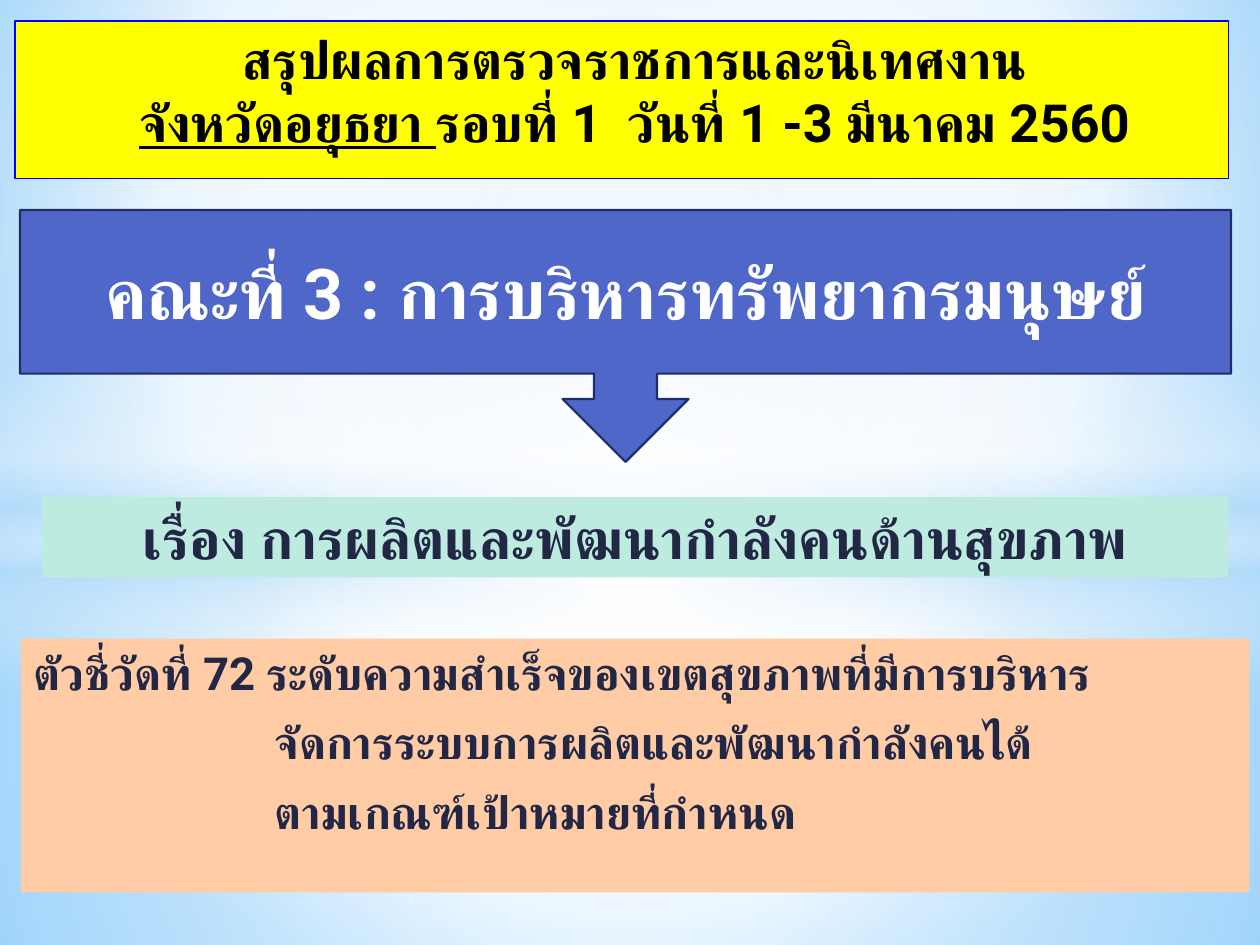
from lxml.etree import SubElement
from pptx import Presentation
from pptx.dml.color import RGBColor
from pptx.enum.shapes import MSO_SHAPE
from pptx.enum.text import MSO_ANCHOR, PP_ALIGN
from pptx.oxml.ns import qn
from pptx.util import Pt

FONT = "Roboto"
BLACK = RGBColor(0x00, 0x00, 0x00)
WHITE = RGBColor(0xFF, 0xFF, 0xFF)
NAVY = RGBColor(0x21, 0x27, 0x45)
YELLOW = RGBColor(0xFF, 0xFF, 0x00)
BLUE = RGBColor(0x00, 0x00, 0xFF)
INDIGO = RGBColor(0x4E, 0x67, 0xC8)
DARK_INDIGO = RGBColor(0x1F, 0x2E, 0x69)
MINT = RGBColor(0xBE, 0xEB, 0xDF)
PEACH = RGBColor(0xFF, 0xCC, 0xA6)
SKY = RGBColor(0xB4, 0xDC, 0xFA)
SKY_LIGHT = RGBColor(0x9E, 0xD5, 0xFF)
SKY_DEEP = RGBColor(0x5B, 0xB9, 0xFF)
CENTRE = (50, 50, 50, 50)


def set_gradient(fill, properties, stops, focus=None, angle=90):
    """Stops are (position, colour, opacity) in percent; a focus makes it circular."""
    fill.gradient()
    gradient = properties.find(".//" + qn("a:gradFill"))
    for child in list(gradient):
        gradient.remove(child)
    stop_list = SubElement(gradient, qn("a:gsLst"))
    for position, colour, opacity in stops:
        stop = SubElement(stop_list, qn("a:gs"), pos=str(position * 1000))
        tint = SubElement(stop, qn("a:srgbClr"), val=str(colour))
        if opacity < 100:
            SubElement(tint, qn("a:alpha"), val=str(opacity * 1000))
    if focus:
        circle = SubElement(gradient, qn("a:path"), path="circle")
        sides = {side: str(value * 1000) for side, value in zip("ltrb", focus)}
        SubElement(circle, qn("a:fillToRect"), **sides)
    else:
        SubElement(gradient, qn("a:lin"), ang=str(angle * 60000), scaled="0")


def add_box(slide, box, fill=None, line=None, line_width=1, kind=MSO_SHAPE.RECTANGLE):
    shape = slide.shapes.add_shape(kind, *(Pt(length) for length in box))
    shape.shadow.inherit = False
    if fill is not None:
        shape.fill.solid()
        shape.fill.fore_color.rgb = fill
    if line is None:
        shape.line.fill.background()
    else:
        shape.line.color.rgb = line
        shape.line.width = Pt(line_width)
    shape.text_frame.word_wrap = True
    shape.text_frame.vertical_anchor = MSO_ANCHOR.TOP
    return shape


def add_text(paragraph, text, size, colour, underline=None, align=PP_ALIGN.CENTER,
             indent=0, before=0, after=0):
    paragraph.alignment = align
    paragraph.space_before, paragraph.space_after = Pt(before), Pt(after)
    if indent:
        paragraph._p.get_or_add_pPr().set("marL", str(Pt(indent)))
    run = paragraph.add_run()
    run.text = text
    font = run.font
    font.name, font.size, font.bold, font.underline = FONT, Pt(size), True, underline
    font.color.rgb = colour
    # Thai takes the complex-script font
    SubElement(run._r.get_or_add_rPr(), qn("a:cs"), typeface=FONT)


def draw_backdrop(slide, box):
    left, top, width, height = box
    background = slide.background
    set_gradient(background.fill, slide._element,
                 [(0, SKY_LIGHT, 100), (60, WHITE, 100), (100, SKY_DEEP, 100)],
                 focus=(20, 10, 20, 60))
    horizon = 304.5
    layers = [
        # Lower and upper glow
        (MSO_SHAPE.RECTANGLE, horizon, height - horizon,
         [(0, WHITE, 91), (37, WHITE, 76), (100, SKY, 79)], CENTRE),
        (MSO_SHAPE.RECTANGLE, 0, horizon,
         [(0, WHITE, 89), (48, WHITE, 62), (100, SKY, 79)], CENTRE),
        # Horizon band
        (MSO_SHAPE.RECTANGLE, 209, 180,
         [(0, WHITE, 0), (29, WHITE, 30), (45, SKY, 40), (55, WHITE, 26),
          (65, SKY, 60), (100, WHITE, 0)], None),
        # Central light
        (MSO_SHAPE.OVAL, 126, 402, [(0, WHITE, 100), (54, WHITE, 0)], CENTRE),
    ]
    for kind, offset, layer_height, stops, focus in layers:
        shape = add_box(slide, (left, top + offset, width, layer_height), kind=kind)
        set_gradient(shape.fill, shape._element.spPr, stops, focus)


def draw_title(slide, box):
    frame = add_box(slide, box, YELLOW, BLUE, 0.75).text_frame
    style = {"size": 30, "colour": BLACK, "indent": 14.4}
    add_text(frame.paragraphs[0], "สรุปผลการตรวจราชการและนิเทศงาน", **style)
    second_line = frame.add_paragraph()
    add_text(second_line, "จังหวัดอยุธยา ", underline=True, **style)
    add_text(second_line, "รอบที่ 1  วันที่ 1 -3 มีนาคม 2560", **style)


def draw_topic(slide, box):
    frame = add_box(slide, box, MINT).text_frame
    add_text(frame.paragraphs[0], "เรื่อง การผลิตและพัฒนากำลังคนด้านสุขภาพ",
             size=32, colour=NAVY, before=2, after=3)


def draw_callout(slide, box):
    frame = add_box(slide, box, INDIGO, DARK_INDIGO, 1.25,
                    MSO_SHAPE.DOWN_ARROW_CALLOUT).text_frame
    frame.vertical_anchor = MSO_ANCHOR.MIDDLE
    add_text(frame.paragraphs[0], "คณะที่ 3 : การบริหารทรัพยากรมนุษย์",
             size=40, colour=WHITE)


def draw_indicator(slide, box):
    frame = add_box(slide, box, PEACH).text_frame
    style = {"size": 26, "colour": NAVY, "align": PP_ALIGN.LEFT, "after": 3}
    add_text(frame.paragraphs[0],
             "ตัวชี่วัดที่ 72 ระดับความสำเร็จของเขตสุขภาพที่มีการบริหาร", before=2, **style)
    for text in ("จัดการระบบการผลิตและพัฒนากำลังคนได้", "ตามเกณฑ์เป้าหมายที่กำหนด"):
        add_text(frame.add_paragraph(), text, before=5.5, indent=138, **style)


def main():
    presentation = Presentation()
    presentation.slide_width, presentation.slide_height = Pt(720), Pt(540)
    slide = presentation.slides.add_slide(presentation.slide_layouts[6])
    draw_backdrop(slide, (0, 0, 720, 540))
    draw_title(slide, (8.64, 12, 693.5, 90))
    draw_topic(slide, (24, 284, 678, 46))
    draw_callout(slide, (11.5, 120, 692, 144))
    draw_indicator(slide, (12, 365, 702, 145))
    presentation.save("out.pptx")


if __name__ == "__main__":
    main()
